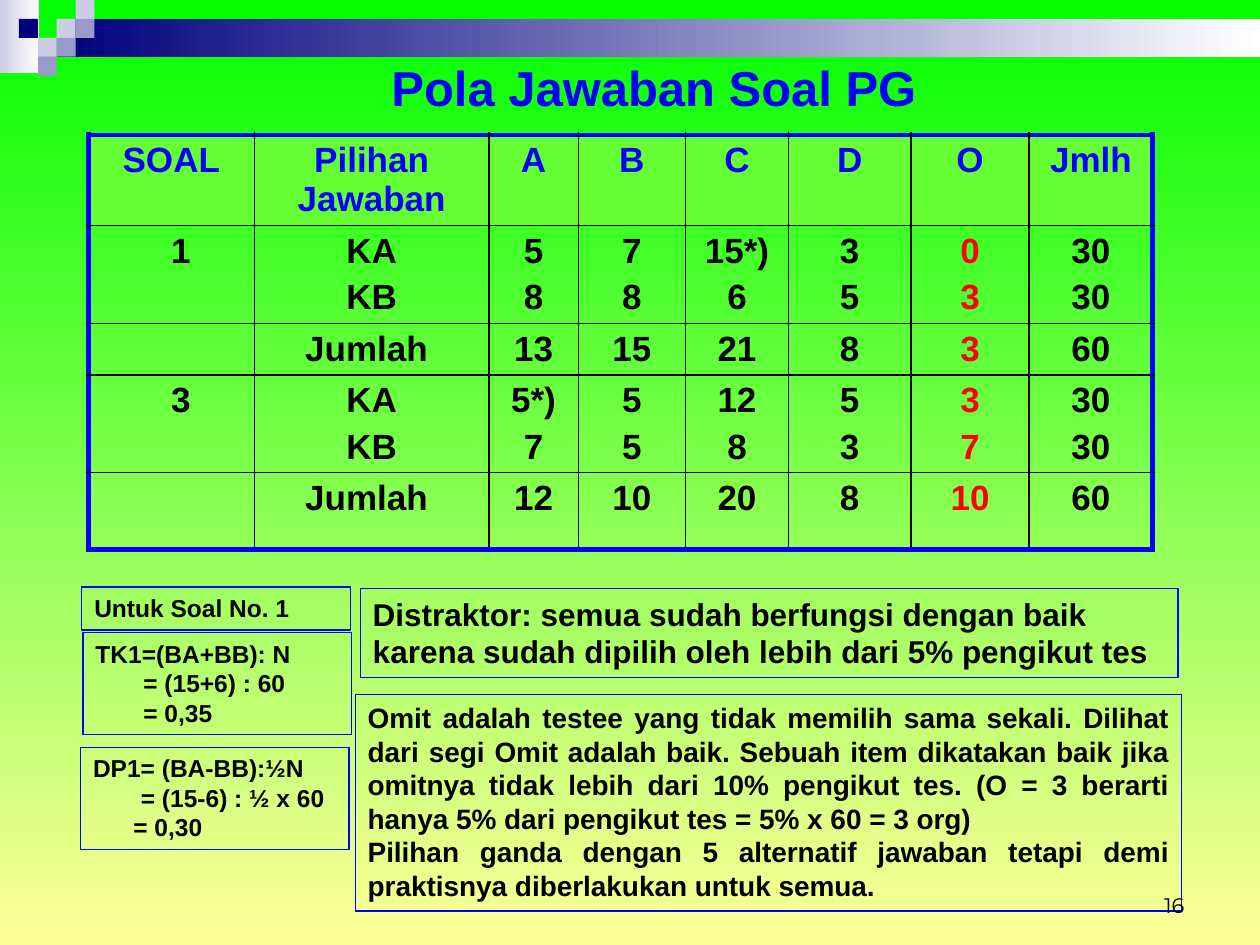
from dataclasses import dataclass

import pptx
import pptx.dml.color
import pptx.enum.shapes
import pptx.enum.text
import pptx.oxml.ns
import pptx.util
from lxml import etree

Inches = pptx.util.Inches
Pt = pptx.util.Pt
Align = pptx.enum.text.PP_ALIGN
RECT = pptx.enum.shapes.MSO_SHAPE.RECTANGLE


@dataclass(frozen=True)
class Theme:
    blue: str = "0000FF"
    black: str = "000000"
    red: str = "FF0000"
    green: str = "00FF00"
    cream: str = "FFFF99"
    head: str = "66FF33"
    navy: str = "00007D"
    mauve: str = "9999CC"
    pale: str = "CCCCE6"
    white: str = "FFFFFF"
    font: str = "Arial"
    page_font: str = "Montserrat"
    title: int = 28
    cell: int = 20
    large: int = 18
    body: int = 16
    small: int = 14
    page: int = 12


THEME = Theme()


@dataclass(frozen=True)
class Area:
    left: float
    top: float
    width: float
    height: float

    def emu(self) -> list:
        return [Inches(n) for n in (self.left, self.top, self.width, self.height)]


@dataclass(frozen=True)
class Note:
    area: Area
    size: int
    lines: tuple
    indents: tuple = ()
    align: Align = Align.LEFT


NOTES = (
    Note(Area(0.66, 5.02, 2.13, 0.81), THEME.small,
         ("TK1=(BA+BB): N", "= (15+6) : 60", "= 0,35"), (0, 0.38, 0.38)),
    Note(Area(0.64, 5.93, 2.13, 0.81), THEME.small,
         ("DP1= (BA-BB):½N", "= (15-6) : ½ x 60", "= 0,30"), (0, 0.38, 0.32)),
    Note(Area(2.86, 4.67, 6.49, 0.71), THEME.large,
         ("Distraktor: semua sudah berfungsi dengan baik karena sudah dipilih "
          "oleh lebih dari 5% pengikut tes",)),
    Note(Area(2.82, 5.51, 6.56, 1.72), THEME.body,
         ("Omit adalah testee yang tidak memilih sama sekali. Dilihat dari segi "
          "Omit adalah baik. Sebuah item dikatakan baik jika omitnya tidak lebih "
          "dari 10% pengikut tes. (O = 3 berarti hanya 5% dari pengikut tes = "
          "5% x 60 = 3 org)",
          "Pilihan ganda dengan 5 alternatif jawaban tetapi demi praktisnya "
          "diberlakukan untuk semua."), align=Align.JUSTIFY),
    Note(Area(0.65, 4.66, 2.13, 0.34), THEME.small, ("Untuk Soal No. 1",)),
)

GRID = Area(0.7, 1.07, 8.46, 3.48)
COLS = (1.32, 1.86, 0.71, 0.85, 0.82, 0.97, 0.94, 0.98)
ROWS = (0.7, 0.77, 0.4, 0.77, 0.61)
CELLS = (
    ("SOAL", "Pilihan Jawaban", "A", "B", "C", "D", "O", "Jmlh"),
    ("1", "KA\nKB", "5\n8", "7\n8", "15*)\n6", "3\n5", "0\n3", "30\n30"),
    ("", "Jumlah", "13", "15", "21", "8", "3", "60"),
    ("3", "KA\nKB", "5*)\n7", "5\n5", "12\n8", "5\n3", "3\n7", "30\n30"),
    ("", "Jumlah", "12", "10", "20", "8", "10", "60"),
)
OMIT = CELLS[0].index("O")

STEP = 0.15
TILES = ((3, 1, THEME.pale), (4, 0, THEME.pale), (4, 1, THEME.mauve),
         (2, 2, THEME.pale), (1, 1, THEME.navy), (3, 2, THEME.mauve),
         (2, 3, THEME.mauve))


def rgb(code: str) -> pptx.dml.color.RGBColor:
    return pptx.dml.color.RGBColor.from_string(code)


def blend(fill, start: str, end: str, angle: int) -> None:
    """Fill with two colours; the angle runs counter-clockwise."""
    fill.gradient()
    fill.gradient_angle = angle
    for stop, code in zip(fill.gradient_stops, (start, end)):
        stop.color.rgb = rgb(code)


def style(par, size: int, code: str, align: Align, bold: bool = True,
          font: str = THEME.font) -> None:
    par.alignment = align
    par.font.name = font
    par.font.size = Pt(size)
    par.font.bold = bold
    par.font.color.rgb = rgb(code)


def add_rect(slide, area: Area):
    shape = slide.shapes.add_shape(RECT, *area.emu())
    shape.shadow.inherit = False
    return shape


def add_band(slide, area: Area, start: str) -> None:
    shape = add_rect(slide, area)
    blend(shape.fill, start, THEME.white, 0)
    shape.line.fill.background()


def add_tile(slide, col: int, row: int, code: str) -> None:
    shape = add_rect(slide, Area(col * STEP, row * STEP, STEP, STEP))
    shape.fill.solid()
    shape.fill.fore_color.rgb = rgb(code)
    shape.line.fill.background()


def add_note(slide, note: Note) -> None:
    shape = add_rect(slide, note.area)
    shape.fill.background()
    shape.line.color.rgb = rgb(THEME.blue)
    shape.line.width = Pt(0.75)
    frame = shape.text_frame
    frame.word_wrap = True
    frame.vertical_anchor = pptx.enum.text.MSO_ANCHOR.TOP
    frame.text = "\n".join(note.lines)
    for par in frame.paragraphs:
        style(par, note.size, THEME.black, note.align)
    for par, indent in zip(frame.paragraphs, note.indents):
        par._p.get_or_add_pPr().set("marL", str(Inches(indent)))


def add_edge(cell, side: str, outer: bool) -> None:
    qn = pptx.oxml.ns.qn
    props = cell._tc.get_or_add_tcPr()
    line = etree.SubElement(props, qn(f"a:ln{side}"), w=str(Pt(3 if outer else 1)))
    fill = etree.SubElement(line, qn("a:solidFill"))
    etree.SubElement(fill, qn("a:srgbClr"), val=THEME.blue if outer else THEME.black)


def fill_cell(cell, row: int, col: int) -> None:
    edges = {"L": col == 0, "R": col == len(COLS) - 1,
             "T": row == 0, "B": row == len(ROWS) - 1}
    for side, outer in edges.items():
        add_edge(cell, side, outer)
    if row == 0:
        cell.fill.solid()
        cell.fill.fore_color.rgb = rgb(THEME.head)
        code = THEME.blue
    else:
        cell.fill.background()
        code = THEME.red if col == OMIT else THEME.black
        if col == 0:
            cell.margin_left = Inches(0.25)
    cell.text_frame.text = CELLS[row][col]
    if CELLS[row][col] == "Jumlah":
        cell.margin_right = Inches(0.18)
    for place, par in enumerate(cell.text_frame.paragraphs):
        style(par, THEME.cell, code, Align.CENTER)
        if place:
            par.space_before = Pt(4)


def add_grid(slide) -> None:
    table = slide.shapes.add_table(len(ROWS), len(COLS), *GRID.emu()).table
    table.first_row = table.horz_banding = False
    for col, width in zip(table.columns, COLS):
        col.width = Inches(width)
    for row, height in zip(table.rows, ROWS):
        row.height = Inches(height)
    for row in range(len(ROWS)):
        for col in range(len(COLS)):
            fill_cell(table.cell(row, col), row, col)


def set_title(slide) -> None:
    title = slide.shapes.title
    title.left, title.top, title.width, title.height = Area(2.16, 0.41, 6.06, 0.57).emu()
    title.text_frame.text = "Pola Jawaban Soal PG"
    title.text_frame.vertical_anchor = pptx.enum.text.MSO_ANCHOR.TOP
    style(title.text_frame.paragraphs[0], THEME.title, THEME.blue, Align.CENTER)


def add_page(slide) -> None:
    frame = slide.shapes.add_textbox(*Area(7.17, 6.83, 2.33, 0.5).emu()).text_frame
    frame.word_wrap = True
    frame.vertical_anchor = pptx.enum.text.MSO_ANCHOR.BOTTOM
    frame.text = "16"
    style(frame.paragraphs[0], THEME.page, THEME.black, Align.RIGHT, False, THEME.page_font)


def main() -> None:
    deck = pptx.Presentation()
    deck.slide_width, deck.slide_height = Inches(10), Inches(7.5)
    slide = deck.slides.add_slide(deck.slide_layouts[5])
    blend(slide.background.fill, THEME.green, THEME.cream, 270)
    add_band(slide, Area(0, 0, 0.31, 0.58), THEME.pale)
    add_band(slide, Area(0.45, 0.15, 9.55, 0.3), THEME.navy)
    for tile in TILES:
        add_tile(slide, *tile)
    add_grid(slide)
    set_title(slide)
    for note in NOTES:
        add_note(slide, note)
    add_page(slide)
    deck.save("out.pptx")


if __name__ == "__main__":
    main()
